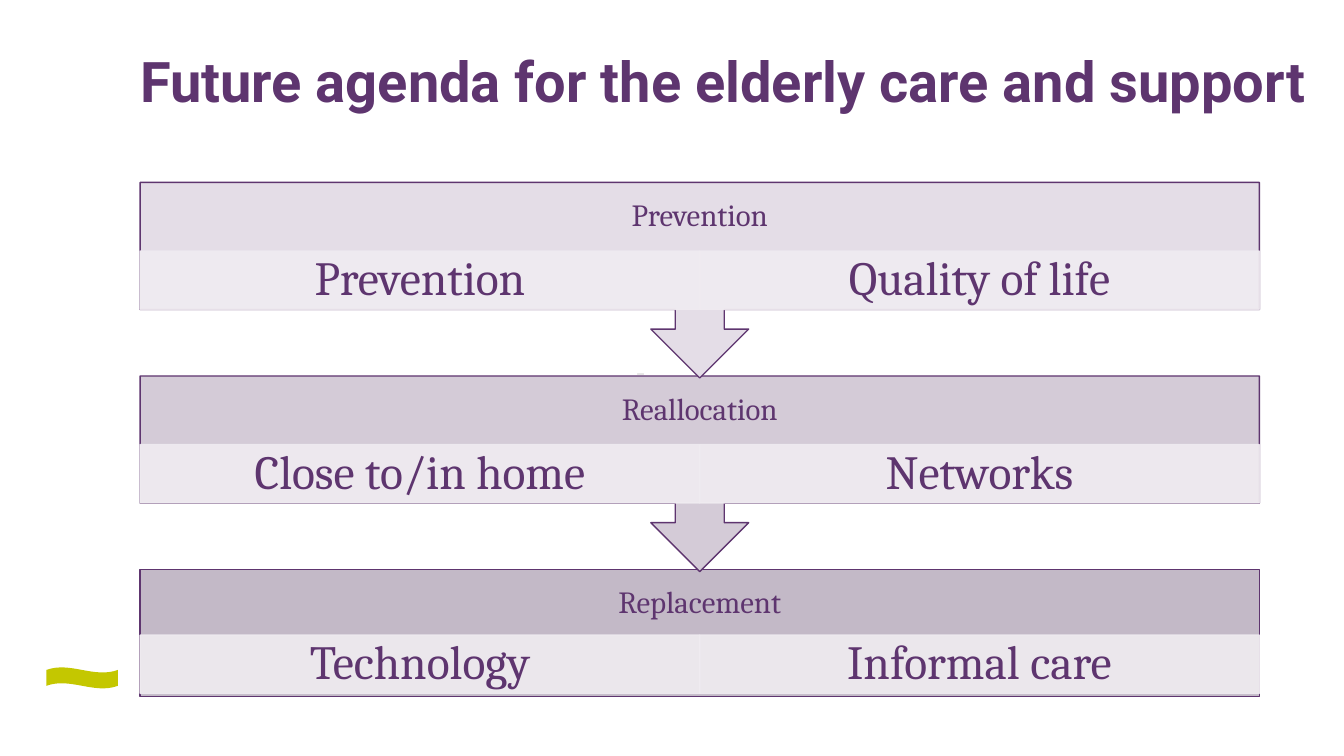
from lxml import etree
from pptx import Presentation
from pptx import util as u
from pptx.dml.color import RGBColor
from pptx.enum import shapes, text
from pptx.oxml.ns import qn

PX = 9144
LEFT, WIDTH, TOP, PITCH = 139, 1110, 181, 192
CELL_HEIGHT = 58


def px(*lengths):
    return [u.Emu(length * PX) for length in lengths]


def rgb(color):
    return RGBColor.from_string(color)


class AgendaSlide:
    """Holds the style and the current slide, and draws each kind of element."""

    ink, pale, lime, grey = "5E356F", "F0ECF1", "C4C700", "D0D0CE"
    sans, serif = "Roboto", "Cambria"

    def __init__(self, deck):
        self.slide = deck.slides.add_slide(deck.slide_layouts[5])

    def set_text(self, shape, words, size, font, color, margins=(0, 0),
                 align=text.PP_ALIGN.CENTER, anchor=text.MSO_ANCHOR.MIDDLE,
                 bold=False, spacing=0.9, wrap=True):
        frame = shape.text_frame
        frame.text = words
        frame.word_wrap = wrap
        frame.auto_size = text.MSO_AUTO_SIZE.NONE
        frame.vertical_anchor = anchor
        frame.margin_left, frame.margin_top = px(*margins)
        frame.margin_right, frame.margin_bottom = px(*margins)
        paragraph = frame.paragraphs[0]
        paragraph.alignment = align
        paragraph.line_spacing = spacing
        paragraph.font.size = u.Pt(size)
        paragraph.font.name = font
        paragraph.font.bold = bold
        paragraph.font.color.rgb = rgb(color)

    def title(self, words, left, top, width, height):
        title = self.slide.shapes.title
        title.left, title.top, title.width, title.height = px(
            left, top, width, height)
        self.set_text(title, words, 40, self.sans, self.ink, bold=True, spacing=1.0,
                      align=text.PP_ALIGN.LEFT, anchor=text.MSO_ANCHOR.TOP)

    def label(self, words, box, size, font, color, **style):
        label = self.slide.shapes.add_textbox(*px(*box))
        self.set_text(label, words, size, font, color, **style)

    def block(self, preset, box, fill, line=None, opacity=100):
        block = self.slide.shapes.add_shape(preset, *px(*box))
        block.shadow.inherit = False
        block.fill.solid()
        block.fill.fore_color.rgb = rgb(fill)
        if line:
            block.line.color.rgb = rgb(line)
            block.line.width = u.Pt(1)
        else:
            block.line.fill.background()
        if opacity < 100:
            for color in block._element.spPr.iter(qn("a:srgbClr")):
                etree.SubElement(color, qn("a:alpha"), val=str(opacity * 1000))
        return block

    def stage(self, heading, topics, fill, top, heading_height, has_arrow):
        if has_arrow:
            callout = self.block(shapes.MSO_SHAPE.UP_ARROW_CALLOUT,
                                 (LEFT, top, WIDTH, 194), fill, self.ink)
            callout.rotation = 180
        else:
            self.block(shapes.MSO_SHAPE.RECTANGLE,
                       (LEFT, top, WIDTH, 126), fill, self.ink)
        self.label(heading, (LEFT, top, WIDTH, 68), 22, self.serif, self.ink,
                   margins=(17, 17))
        topic_width = WIDTH // len(topics)
        for column, topic in enumerate(topics):
            box = (LEFT + column * topic_width, top + heading_height,
                   topic_width, CELL_HEIGHT)
            cell = self.block(shapes.MSO_SHAPE.RECTANGLE, box,
                              self.pale, self.pale, opacity=90)
            self.set_text(cell, topic, 34, self.serif, self.ink, margins=(26, 5))


def main():
    deck = Presentation()
    deck.slide_width, deck.slide_height = u.Inches(13.33), u.Inches(7.5)
    agenda = AgendaSlide(deck)
    agenda.title("Future agenda for the elderly care and support", 139, 46, 1188, 98)
    agenda.block(shapes.MSO_SHAPE.WAVE, (46, 662, 71, 21), agenda.lime)
    agenda.label("–", (631, 363, 13, 23), 10, agenda.sans, agenda.grey,
                 align=text.PP_ALIGN.LEFT, anchor=text.MSO_ANCHOR.TOP,
                 spacing=1.0, wrap=False)

    stages = [
        ("Prevention", ("Prevention", "Quality of life"), "E4DDE7", 68),
        ("Reallocation", ("Close to/in home", "Networks"), "D4CBD7", 68),
        ("Replacement", ("Technology", "Informal care"), "C3B9C7", 65),
    ]
    last = len(stages) - 1
    for row in range(last, -1, -1):
        heading, topics, fill, heading_height = stages[row]
        agenda.stage(heading, topics, fill, TOP + row * PITCH,
                     heading_height, has_arrow=row < last)
    deck.save("out.pptx")


if __name__ == "__main__":
    main()
